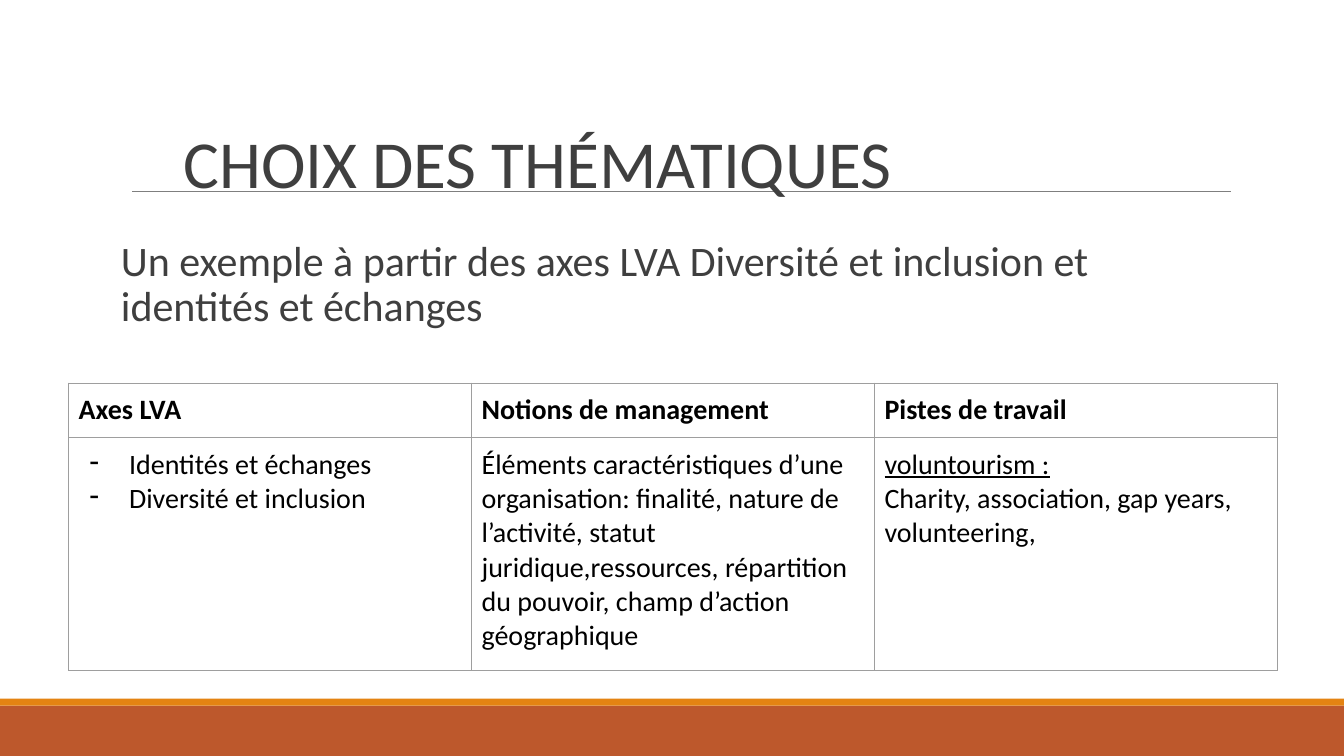
from lxml import etree
from pptx import Presentation
from pptx.dml.color import RGBColor
from pptx.enum.shapes import MSO_CONNECTOR, MSO_SHAPE
from pptx.enum.text import MSO_ANCHOR
from pptx.oxml.ns import qn
from pptx.util import Inches, Pt

RECTANGLE = MSO_SHAPE.RECTANGLE
STRAIGHT = MSO_CONNECTOR.STRAIGHT
TOP, BOTTOM = MSO_ANCHOR.TOP, MSO_ANCHOR.BOTTOM

RUST = RGBColor(0xBD, 0x58, 0x2C)
ORANGE = RGBColor(0xE4, 0x83, 0x12)
RULE_GREY = RGBColor(0x7F, 0x7F, 0x7F)
BORDER_GREY = RGBColor(0x9E, 0x9E, 0x9E)
DARK_GREY = RGBColor(0x3F, 0x3F, 0x3F)
BLACK = RGBColor(0, 0, 0)
FONT = "Calibri"
WIDTH, HEIGHT = 13.33, 7.5

HEADERS = ["Axes LVA", "Notions de management", "Pistes de travail"]
AXES = ["Identités et échanges", "Diversité et inclusion"]
NOTIONS = [
    "Éléments caractéristiques d’une organisation: finalité, nature de "
    "l’activité, statut juridique,ressources, répartition du pouvoir, "
    "champ d’action géographique"
]
LEADS = ["voluntourism :", "Charity, association, gap years, volunteering,"]


def add_run(paragraph, text, size, color, bold=False, underline=False):
    run = paragraph.add_run()
    run.text = text
    font = run.font
    font.name, font.size, font.bold = FONT, Pt(size), bold
    font.underline = underline
    font.color.rgb = color


def add_band(slide, box, color):
    band = slide.shapes.add_shape(RECTANGLE, *map(Inches, box))
    band.shadow.inherit = False
    band.fill.solid()
    band.fill.fore_color.rgb = color
    band.line.fill.background()


def add_footer(slide, box):
    left, top, width, height = box
    stripe = height / 8
    add_band(slide, (left, top + stripe, width, height - stripe), RUST)
    add_band(slide, (left, top, width, stripe), ORANGE)


def add_rule(slide, left, right, y):
    rule = slide.shapes.add_connector(
        STRAIGHT, Inches(left), Inches(y), Inches(right), Inches(y))
    rule.line.color.rgb = RULE_GREY
    rule.line.width = Pt(0.75)
    etree.SubElement(rule._element.spPr, qn("a:effectLst"))


def add_text(slide, box, text, size, anchor, side_inset, spacing, before=0):
    frame = slide.shapes.add_textbox(*map(Inches, box)).text_frame
    frame.word_wrap = True
    frame.vertical_anchor = anchor
    frame.margin_left = frame.margin_right = Inches(side_inset)
    frame.margin_top = frame.margin_bottom = Inches(0.05)
    paragraph = frame.paragraphs[0]
    paragraph.line_spacing = spacing
    paragraph.space_before = Pt(before)
    add_run(paragraph, text, size, DARK_GREY)


def add_dash(paragraph):
    props = paragraph._p.get_or_add_pPr()
    props.set("marL", str(Inches(0.5)))
    props.set("indent", str(Inches(-0.39)))
    color = etree.SubElement(props, qn("a:buClr"))
    etree.SubElement(color, qn("a:srgbClr"), val=str(BLACK))
    etree.SubElement(props, qn("a:buChar"), char="-")


def style_cell(cell):
    cell.fill.background()
    cell.vertical_anchor = TOP
    cell.margin_left = cell.margin_right = Inches(0.1)
    cell.margin_top = cell.margin_bottom = Inches(0.1)
    props = cell._tc.get_or_add_tcPr()
    for position, side in enumerate(("lnL", "lnR", "lnT", "lnB")):
        border = etree.Element(qn(f"a:{side}"), w=str(Pt(0.75)))
        fill = etree.SubElement(border, qn("a:solidFill"))
        etree.SubElement(fill, qn("a:srgbClr"), val=str(BORDER_GREY))
        props.insert(position, border)


def add_themes_table(slide, box):
    rows = [[[header] for header in HEADERS], [AXES, NOTIONS, LEADS]]
    heights = (0.54, box[3] - 0.54)
    table = slide.shapes.add_table(
        len(rows), len(HEADERS), *map(Inches, box)).table
    table.first_row = table.horz_banding = False
    for column in table.columns:
        column.width = Inches(box[2] / len(HEADERS))
    for r, row in enumerate(rows):
        table.rows[r].height = Inches(heights[r])
        for c, lines in enumerate(row):
            cell = table.cell(r, c)
            style_cell(cell)
            frame = cell.text_frame
            for i, line in enumerate(lines):
                paragraph = frame.add_paragraph() if i else frame.paragraphs[0]
                if lines is AXES:
                    add_dash(paragraph)
                add_run(paragraph, line, 20, BLACK, bold=r == 0,
                        underline=line == LEADS[0])


def build_themes_slide(slide):
    footer_top = HEIGHT - 0.57
    add_footer(slide, (0, footer_top, WIDTH, HEIGHT - footer_top))
    add_rule(slide, 1.31, 12.21, 1.9)
    add_text(slide, (1.72, 0.88, 9.27, 1.18), "CHOIX DES THÉMATIQUES",
             48, BOTTOM, 0.1, 0.85)
    add_text(slide, (1.2, 2.33, 11, 4.09),
             "Un exemple à partir des axes LVA Diversité et inclusion et "
             "identités et échanges", 30, TOP, 0, 0.9, before=6)
    add_themes_table(slide, (0.68, 3.8, 11.99, 2.85))


def main():
    deck = Presentation()
    deck.slide_width, deck.slide_height = Inches(WIDTH), Inches(HEIGHT)
    build_themes_slide(deck.slides.add_slide(deck.slide_layouts[6]))
    deck.save("out.pptx")


if __name__ == "__main__":
    main()
